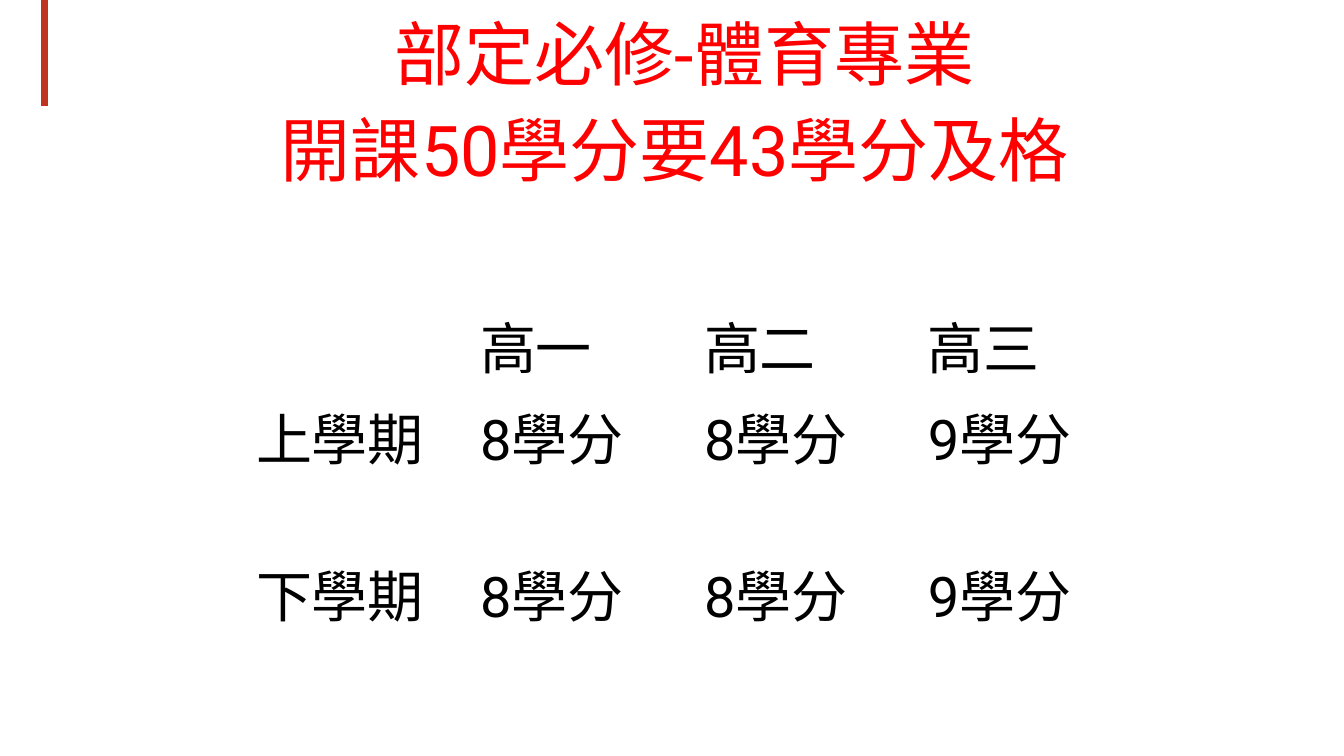
import pptx
import pptx.util
import pptx.dml.color
import pptx.enum.shapes
import pptx.enum.text
import pptx.oxml

Pt = pptx.util.Pt
RGB = pptx.dml.color.RGBColor
Align = pptx.enum.text.PP_ALIGN

HEAD = "部定必修-體育專業"
NOTE = "開課50學分要43學分及格"
ROWS = [
    ["", "高一", "高二", "高三"],
    ["上學期", "8學分", "8學分", "9學分"],
    ["下學期", "8學分", "8學分", "9學分"],
]

THEME = {"font": "Roboto", "head": 50, "cell": 40,
         "red": "FF0000", "ink": "000000", "bar": "BF3420"}
WIDE, HIGH = 960, 540
LEFT, SPAN, TALL = 120, 720, 72
GRID = (175.7, 213.8)
COL = 160
TALLS = [65.2, 112, 65.2]


def write(frame, text, size, color, align=Align.LEFT, inset=(7.2, 3.6),
          indent=(0, 0), space=1):
    frame.word_wrap = True
    frame.vertical_anchor = pptx.enum.text.MSO_ANCHOR.TOP
    frame.margin_left = frame.margin_right = Pt(inset[0])
    frame.margin_top = frame.margin_bottom = Pt(inset[1])
    para = frame.paragraphs[0]
    para.alignment = align
    para.line_spacing = space
    para.space_before = Pt(0)
    props = para._p.get_or_add_pPr()
    props.set("marL", str(Pt(indent[0])))
    props.set("indent", str(Pt(indent[1])))
    run = para.add_run()
    run.text = text
    run.font.name = THEME["font"]
    run.font.size = Pt(size)
    run.font.color.rgb = RGB.from_string(color)


def place(shape, top):
    shape.left, shape.top = Pt(LEFT), Pt(top)
    shape.width, shape.height = Pt(SPAN), Pt(TALL)


def main():
    deck = pptx.Presentation()
    deck.slide_width, deck.slide_height = Pt(WIDE), Pt(HIGH)
    slide = deck.slides.add_slide(deck.slide_layouts[5])
    shapes = slide.shapes

    bar = shapes.add_connector(pptx.enum.shapes.MSO_CONNECTOR.STRAIGHT,
                               Pt(32), Pt(0), Pt(32), Pt(75.6))
    bar.line.color.rgb = RGB.from_string(THEME["bar"])
    bar.line.width = Pt(4.8)
    bar._element.spPr.append(pptx.oxml.parse_xml(
        '<a:effectLst xmlns:a='
        '"http://schemas.openxmlformats.org/drawingml/2006/main"/>'))

    title = shapes.title
    place(title, 14.4)
    write(title.text_frame, HEAD, THEME["head"], THEME["red"],
          align=Align.CENTER, inset=(0, 0), indent=(36, -18), space=0.9)

    note = shapes.add_textbox(0, 0, 0, 0)
    place(note, 79.2)
    write(note.text_frame, NOTE, THEME["head"], THEME["red"],
          align=Align.CENTER, indent=(36, -31.7), space=0.9)

    frame = shapes.add_table(len(ROWS), len(ROWS[0]), Pt(GRID[0]), Pt(GRID[1]),
                             Pt(COL * len(ROWS[0])), Pt(sum(TALLS)))
    table = frame.table
    table.first_row = table.horz_banding = False
    for col in table.columns:
        col.width = Pt(COL)
    for r, row in enumerate(ROWS):
        table.rows[r].height = Pt(TALLS[r])
        for c, text in enumerate(row):
            cell = table.cell(r, c)
            cell.fill.background()
            if text:
                write(cell.text_frame, text, THEME["cell"], THEME["ink"])

    deck.save("out.pptx")


if __name__ == "__main__":
    main()
